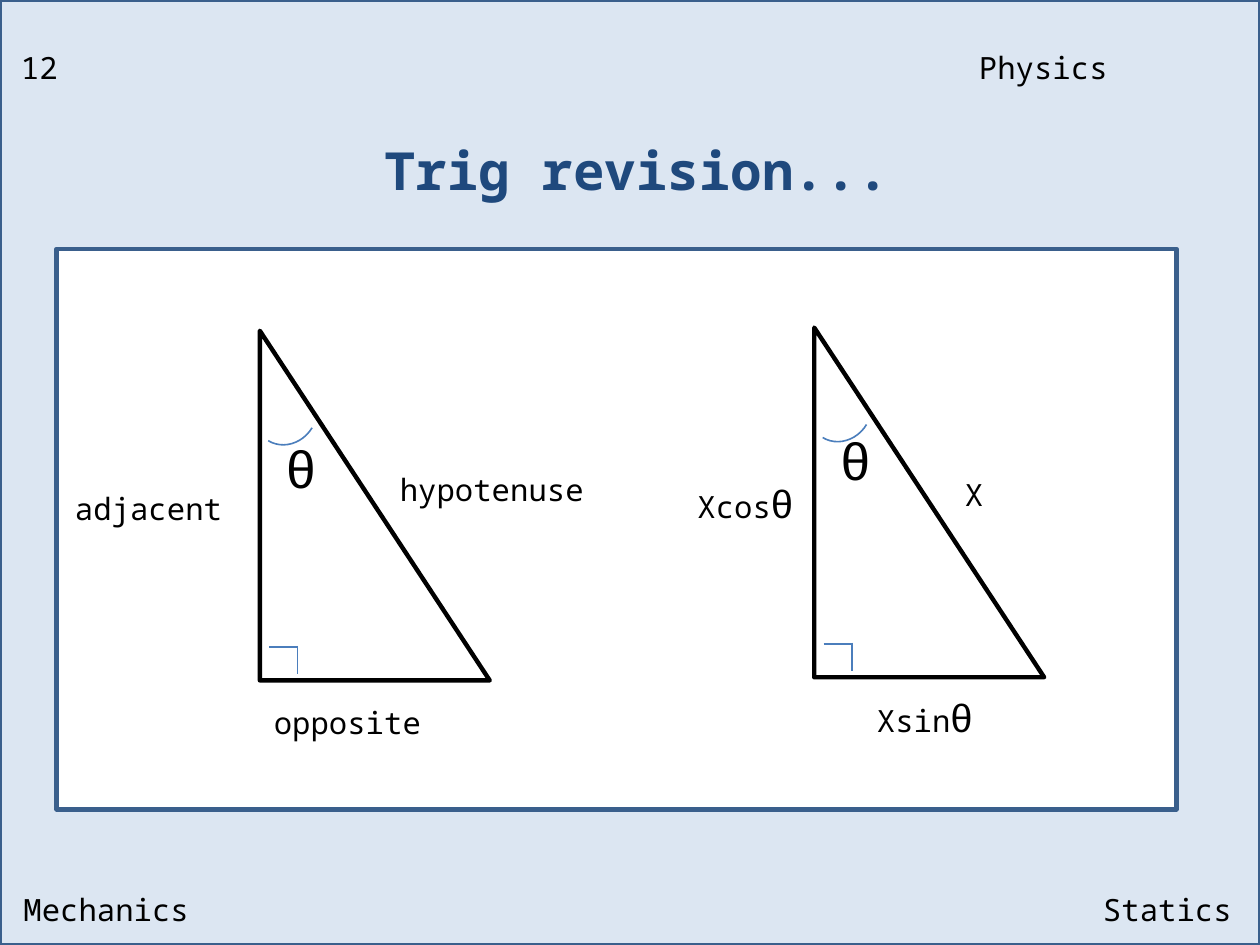
from lxml import etree
from pptx import Presentation
from pptx.dml.color import RGBColor
from pptx.enum import shapes, text
from pptx.oxml.ns import qn
from pptx.util import Pt

PX = 9144  # 100 px to the inch
SLIDE_W, SLIDE_H = 800, 600

PALE_BLUE = RGBColor(0xDC, 0xE6, 0xF2)
FRAME_BLUE = RGBColor(0x3A, 0x5F, 0x8C)
TITLE_BLUE = RGBColor(0x1F, 0x49, 0x7D)
MARK_BLUE = RGBColor(0x4B, 0x7E, 0xBC)
WHITE = RGBColor(0xFF, 0xFF, 0xFF)
BLACK = RGBColor(0, 0, 0)

MONO, GREEK = "Noto Sans Mono", "Arial"
LEFT, CENTER, RIGHT = text.PP_ALIGN.LEFT, text.PP_ALIGN.CENTER, text.PP_ALIGN.RIGHT
SHAPE = shapes.MSO_SHAPE

# Word, θ after it, left, top, width, height, alignment
LABELS = [
    ("Mechanics", "", 5, 561, 225, 34, LEFT),
    ("Physics", "", 550, 26, 225, 34, CENTER),
    ("12", "", 0, 26, 50, 34, CENTER),
    ("Statics", "", 350, 561, 442, 34, RIGHT),
    ("adjacent", "", 0, 306, 151, 34, RIGHT),
    ("hypotenuse", "", 244, 294, 151, 34, LEFT),
    ("opposite", "", 164, 442, 151, 34, LEFT),
    ("X", "", 543, 297, 151, 34, CENTER),
    ("Xsin", "θ", 547, 435, 90, 40, LEFT),
    ("Xcos", "θ", 433, 299, 90, 40, LEFT),
]
TITLE = ("Trig revision...", 133, 83, 542, 50)
PANEL = (36, 158, 711, 356)

# Left and top of each triangle, top of its θ
TRIANGLES = [(165, 210, 272), (517, 208, 267)]
TRIANGLE_W, TRIANGLE_H = 146, 222
ARC_TURN = 121.3
CORNER = 18  # side of the right-angle mark

prs = Presentation()
prs.slide_width, prs.slide_height = SLIDE_W * PX, SLIDE_H * PX
slide = prs.slides.add_slide(prs.slide_layouts[6])


def emu(*lengths):
    return [round(length * PX) for length in lengths]


def add_outline(kind, box, line, width, fill=None):
    """Add a preset shape; without a fill colour it stays hollow."""
    outline = slide.shapes.add_shape(kind, *emu(*box))
    outline.shadow.inherit = False
    if fill is None:
        outline.fill.background()
    else:
        outline.fill.solid()
        outline.fill.fore_color.rgb = fill
    outline.line.color.rgb = line
    outline.line.width = Pt(width)
    return outline


def add_text(runs, box, align, color=BLACK, bold=False):
    """Add a one-line box from (words, size, font) runs."""
    frame = slide.shapes.add_textbox(*emu(*box)).text_frame
    frame.word_wrap = True
    line = frame.paragraphs[0]
    line.alignment = align
    for words, size, name in runs:
        run = line.add_run()
        run.text = words
        run.font.color.rgb = color
        for key, value in {"size": Pt(size), "name": name, "bold": bold}.items():
            setattr(run.font, key, value)


def add_mark(x1, y1, x2, y2):
    mark = slide.shapes.add_connector(
        shapes.MSO_CONNECTOR.STRAIGHT, *emu(x1, y1, x2, y2))
    mark.line.color.rgb = MARK_BLUE
    mark.line.width = Pt(0.75)
    etree.SubElement(mark._element.spPr, qn("a:effectLst"))


def add_triangle(left, top, theta_top):
    """Add a right triangle with its angle arc, corner mark and θ."""
    add_outline(SHAPE.RIGHT_TRIANGLE, (left, top, TRIANGLE_W, TRIANGLE_H), BLACK, 2)
    arc = add_outline(SHAPE.ARC, (left - 5, top + 32, 43, 39), MARK_BLUE, 0.75)
    arc.rotation = ARC_TURN
    mark_x, mark_y = left + 6 + CORNER, top + 201
    add_mark(mark_x - CORNER, mark_y, mark_x, mark_y)
    add_mark(mark_x, mark_y - 1, mark_x, mark_y - 1 + CORNER)
    add_text([("θ", 24, GREEK)], (left + 7, theta_top, 42, 50), LEFT)


add_outline(SHAPE.RECTANGLE, (0, 0, SLIDE_W, SLIDE_H), FRAME_BLUE, 2, PALE_BLUE)
add_outline(SHAPE.RECTANGLE, PANEL, FRAME_BLUE, 2, WHITE)

heading, *heading_box = TITLE
add_text([(heading, 24, MONO)], heading_box, CENTER, TITLE_BLUE, True)

for triangle in TRIANGLES:
    add_triangle(*triangle)

for word, theta, *box, align in LABELS:
    runs = [(word, 14, MONO)]
    if theta:
        runs.append((theta, 18, GREEK))
    add_text(runs, box, align)

prs.save("out.pptx")
